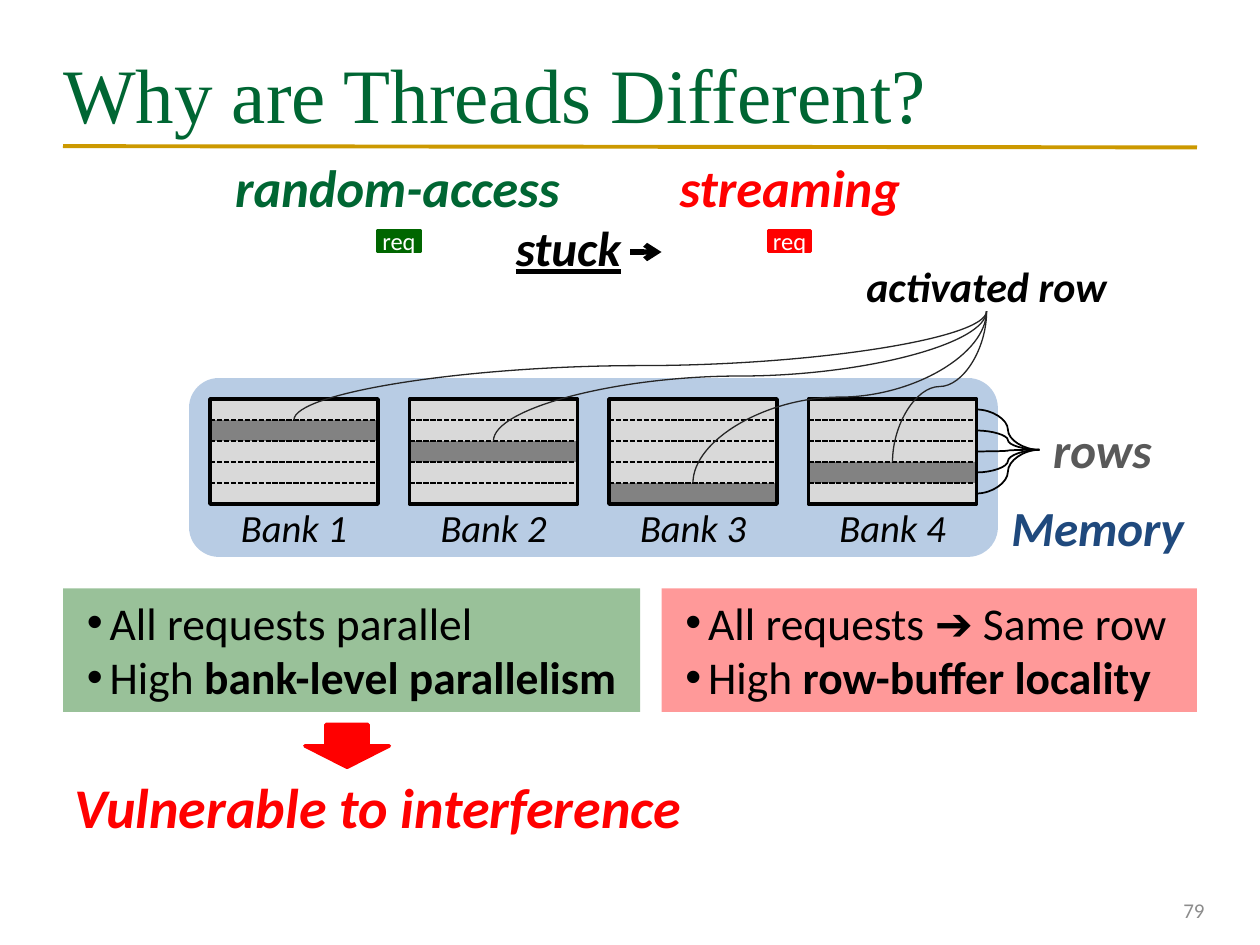
"""Build the slide on why threads differ in how they use memory banks."""
from lxml.etree import SubElement
from pptx import Presentation
from pptx.dml.color import RGBColor
from pptx.enum.dml import MSO_LINE as Dash
from pptx.enum.shapes import MSO_CONNECTOR as Link, MSO_SHAPE as Kind
from pptx.enum.text import MSO_ANCHOR as Anchor, PP_ALIGN as Align
from pptx.oxml.ns import qn
from pptx.util import Inches, Pt

HUE = {
    "black": "000000", "white": "FFFFFF", "red": "FF0000", "green": "006600",
    "title": "006633", "gold": "CC9900", "blue": "4F81BD", "navy": "1F497D",
    "pale": "D9D9D9", "dark": "262626", "gray": "595959", "page": "8C8C8C",
}
TITLE = "Why are Threads Different?"
STRONG = {"bold": True, "italic": True}
LABELS = [
    ("random-access", (1.83, 1.33, 2.65, 0.42), {"size": 30, "hue": "title", "gap": 0.8, **STRONG}),
    ("streaming", (5.17, 1.33, 2.2, 0.42), {"size": 30, "hue": "red", "gap": 0.8, **STRONG}),
    ("stuck", (4.02, 1.73, 0.98, 0.47), {"size": 28, "under": True, **STRONG}),
    ("activated row", (6.83, 2.07, 2, 0.4), {"size": 24, **STRONG}),
    ("rows", (8.25, 3.33, 1, 0.47), {"size": 28, "hue": "gray", **STRONG}),
    ("Memory", (8, 3.95, 1.42, 0.47), {"size": 28, "hue": "navy", **STRONG}),
    ("Vulnerable to interference", (0.5, 6.08, 5, 0.64),
     {"size": 32, "hue": "red", "pad": 0.05, **STRONG}),
    ("79", (7.33, 7.02, 2.23, 0.4),
     {"size": 12, "hue": "page", "align": Align.RIGHT, "anchor": Anchor.MIDDLE}),
]
PANELS = [
    (0.5, 4.58, "green", ["All requests parallel", "High *bank-level parallelism"]),
    (5.25, 4.25, "red", ["All requests ➔ Same row", "High *row-buffer locality"]),
]
REQS = [(3, "green"), (6.1, "red")]
BANKS = [("Bank 1", 1), ("Bank 2", 2), ("Bank 3", 4), ("Bank 4", 3)]
ROWS = 5
UNIT = 1 / 6
LEFT, TOP, WIDE, STEP = 10 * UNIT, 19 * UNIT, 8 * UNIT, 9.5 * UNIT
FAN = (8.25, 3.57)
PEAK = (7.83, 2.47)

deck = Presentation()
deck.slide_width, deck.slide_height = Inches(10), Inches(7.5)
slide = deck.slides.add_slide(deck.slide_layouts[5])
shapes = slide.shapes


def rgb(hue):
    """Give the colour of a name."""
    return RGBColor.from_string(HUE[hue])


def write(shape, lines, size=18, hue="black", font="Calibri", bold=False,
          italic=False, under=False, align=Align.CENTER, anchor=Anchor.TOP,
          pad=0, gap=None, bullet=False):
    """Fill a shape with lines of text; a star starts a bold part."""
    frame = shape.text_frame
    frame.word_wrap, frame.vertical_anchor = True, anchor
    frame.margin_left = frame.margin_right = 0
    frame.margin_top = frame.margin_bottom = Inches(pad)
    for row, line in enumerate(lines):
        para = frame.add_paragraph() if row else frame.paragraphs[0]
        para.alignment, para.line_spacing = align, gap
        if bullet:
            props = para._p.get_or_add_pPr()
            props.set("marL", str(Inches(0.37)))
            props.set("indent", str(Inches(-0.18)))
            SubElement(props, qn("a:buFont"), typeface="Arial")
            SubElement(props, qn("a:buChar"), char="•")
        for part, words in enumerate(line.split("*")):
            run = para.add_run()
            run.text = words
            face = run.font
            face.name, face.size, face.color.rgb = font, Pt(size), rgb(hue)
            face.bold, face.italic, face.underline = bold or part > 0, italic, under


def label(words, box, **form):
    """Add a text box."""
    write(shapes.add_textbox(*map(Inches, box)), [words], **form)


def block(kind, box, fill, line=None, alpha=None):
    """Add a filled shape, with an outline or see-through if asked."""
    shape = shapes.add_shape(kind, *map(Inches, box))
    shape.shadow.inherit = False
    shape.fill.solid()
    shape.fill.fore_color.rgb = rgb(fill)
    if alpha:
        tint = shape._element.spPr.find(".//" + qn("a:srgbClr"))
        SubElement(tint, qn("a:alpha"), val=str(alpha * 1000))
    if line:
        shape.line.color.rgb, shape.line.width = rgb(line), Pt(2)
    else:
        shape.line.fill.background()
    return shape


def link(start, end, hue="black", width=1, kind=Link.STRAIGHT):
    """Add a line without a shadow."""
    line = shapes.add_connector(kind, *map(Inches, (*start, *end)))
    line.line.color.rgb, line.line.width = rgb(hue), Pt(width)
    SubElement(line._element.spPr, qn("a:effectLst"))
    return line


def rise(start, end):
    """Add a curve that leaves and arrives upright."""
    midx, midy = (start[0] + end[0]) / 2, (start[1] + end[1]) / 2
    dx, dy = (end[0] - start[0]) / 2, (start[1] - end[1]) / 2
    curve = link((midx + dy, midy + dx), (midx - dy, midy - dx), "dark", 0.75, Link.CURVE)
    curve._element.spPr.xfrm.set("rot", "5400000")


link((0.5, 1.16), (9.5, 1.17), "gold", 2.25)
title = shapes.title
title.left, title.top, title.width, title.height = map(Inches, (0.5, 0.3, 9, 0.87))
write(title, [TITLE], size=44, hue="title", font="Times New Roman",
      align=Align.LEFT, anchor=Anchor.MIDDLE, pad=0.05)

block(Kind.ROUNDED_RECTANGLE, (1.5, 3, 6.42, 1.42), "blue", alpha=40)
for col, (name, live) in enumerate(BANKS):
    x = LEFT + col * STEP
    block(Kind.RECTANGLE, (x, TOP, WIDE, ROWS * UNIT), "pale", "black")
    for row in range(1, ROWS):
        y = TOP + row * UNIT
        link((x, y), (x + WIDE, y)).line.dash_style = Dash.SQUARE_DOT
    label(name, (x, 4, WIDE, 0.37), size=22, italic=True)
    y = TOP + live * UNIT
    block(Kind.RECTANGLE, (x, y, WIDE, UNIT), "black", alpha=40)
for col, (name, live) in enumerate(BANKS):
    rise((LEFT + col * STEP + WIDE / 2, TOP + live * UNIT), PEAK)
for row in range(ROWS):
    link((LEFT + 3 * STEP + WIDE, TOP + (row + 0.5) * UNIT), FAN, kind=Link.CURVE)

for x, wide, hue, lines in PANELS:
    panel = block(Kind.RECTANGLE, (x, 4.67, wide, 0.98), hue, alpha=40)
    write(panel, lines, size=26, align=Align.LEFT, pad=0.05, bullet=True)
for x, hue in REQS:
    req = block(Kind.RECTANGLE, (x, 1.83, 2 * UNIT, UNIT), hue, hue)
    write(req, ["req"], size=14, hue="white", anchor=Anchor.MIDDLE, pad=0.05)
for words, box, form in LABELS:
    label(words, box, **form)
block(Kind.DOWN_ARROW, (2.42, 5.75, 0.67, 0.34), "red", "red")
arrow = link((5.25, 2), (5, 2), width=3)
SubElement(arrow.line._get_or_add_ln(), qn("a:headEnd"), type="arrow")

deck.save("out.pptx")
